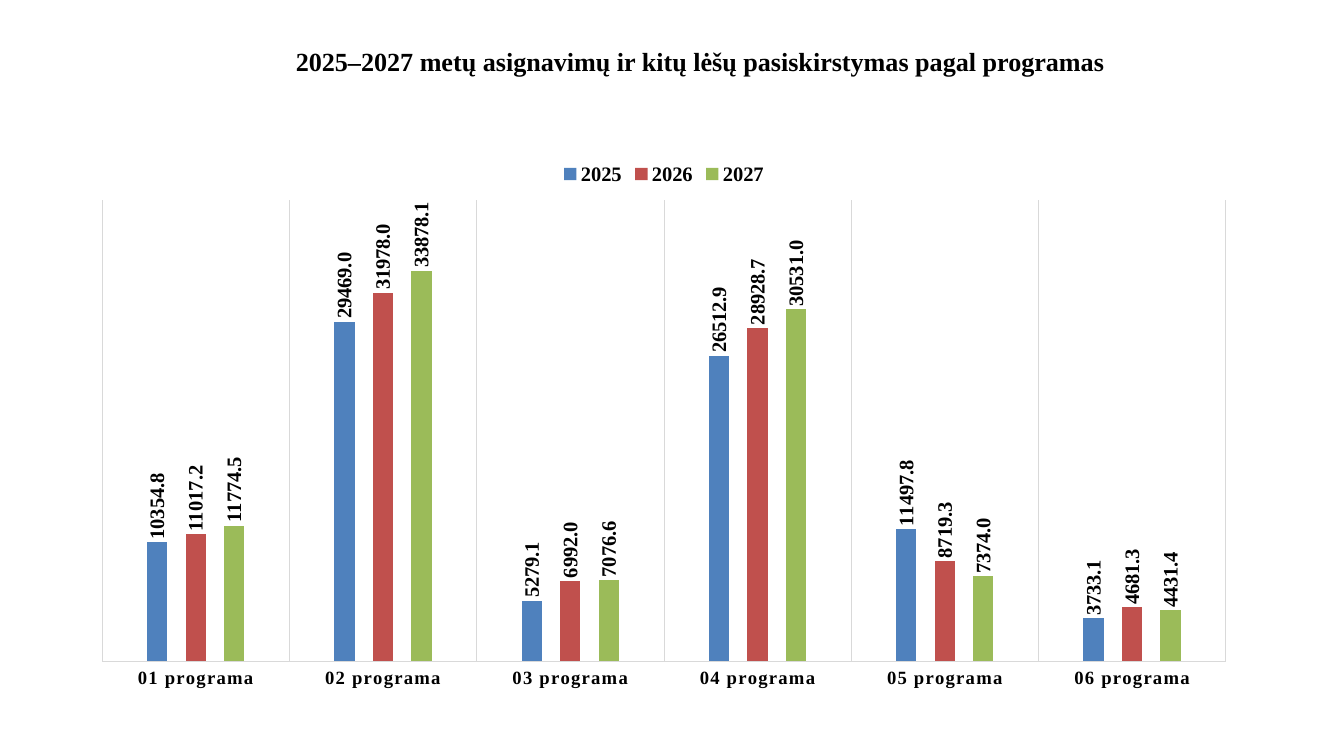
from lxml import etree
from pptx import Presentation
from pptx.chart.data import CategoryChartData
from pptx.dml.color import RGBColor
from pptx.enum.chart import XL_CHART_TYPE as ChartType
from pptx.enum.chart import XL_LABEL_POSITION as LabelPosition
from pptx.enum.chart import XL_LEGEND_POSITION as LegendPosition
from pptx.enum.chart import XL_TICK_LABEL_POSITION as TickLabelPosition
from pptx.enum.chart import XL_TICK_MARK as TickMark
from pptx.enum.text import MSO_AUTO_SIZE as AutoSize
from pptx.enum.text import PP_ALIGN as Align
from pptx.oxml import parse_xml
from pptx.oxml.ns import nsdecls, qn
from pptx.util import Pt

PX = 9144
FONT = "Times New Roman"
BLACK = "000000"
GREY = "D9D9D9"
PROGRAMS = [f"{number:02d} programa" for number in range(1, 7)]
YEARS = [
    ("2025", "4F81BD", [10354.8, 29469, 5279.1, 26512.9, 11497.8, 3733.1]),
    ("2026", "C0504D", [11017.2, 31978, 6992, 28928.7, 8719.3, 4681.3]),
    ("2027", "9BBB59", [11774.5, 33878.1, 7076.6, 30531, 7374, 4431.4]),
]


def color(hex_string):
    return RGBColor.from_string(hex_string)


def style_font(font, size):
    font.name = FONT
    font.size = Pt(size)
    font.bold = True
    font.color.rgb = color(BLACK)


presentation = Presentation()
presentation.slide_width = 2000 * PX
presentation.slide_height = 1125 * PX
slide = presentation.slides.add_slide(presentation.slide_layouts[6])

chart_data = CategoryChartData(number_format="0.0")
chart_data.categories = PROGRAMS
for year, _, amounts in YEARS:
    chart_data.add_series(year, amounts)
chart = slide.shapes.add_chart(
    ChartType.COLUMN_CLUSTERED, 117 * PX, 229 * PX, 1742 * PX, 808 * PX, chart_data
).chart
chart.has_title = False
chart.font.name = "Calibri"
chart.font.size = Pt(10)
chart.font.color.rgb = color(BLACK)

chart.has_legend = True
chart.legend.position = LegendPosition.TOP
chart.legend.include_in_layout = False
style_font(chart.legend.font, 22)

category_axis = chart.category_axis
category_axis.major_tick_mark = TickMark.NONE
category_axis.minor_tick_mark = TickMark.NONE
category_axis.tick_label_position = TickLabelPosition.LOW
category_axis.has_major_gridlines = True
for line in (category_axis.format.line, category_axis.major_gridlines.format.line):
    line.color.rgb = color(GREY)
    line.width = Pt(0.75)
style_font(category_axis.tick_labels.font, 20)
category_axis._element.find(".//" + qn("a:defRPr")).set("spc", "120")

value_axis = chart.value_axis
value_axis.visible = False
value_axis.has_major_gridlines = False
value_axis.minimum_scale = 0
value_axis.maximum_scale = 40000

plot = chart.plots[0]
plot.gap_width = 444
plot.overlap = -90
plot.vary_by_categories = False
for series, (_, fill_color, _) in zip(plot.series, YEARS):
    series.format.fill.solid()
    series.format.fill.fore_color.rgb = color(fill_color)
    labels = series.data_labels
    labels.show_value = True
    labels.position = LabelPosition.OUTSIDE_END
    labels.number_format = "0.0"
    labels.number_format_is_linked = False
    style_font(labels.font, 22)
    body = labels._element.find(".//" + qn("a:bodyPr"))
    body.set("rot", "-5400000")
    body.set("vert", "horz")

plot_area = chart._chartSpace.find(".//" + qn("c:plotArea"))
for old_layout in plot_area.findall(qn("c:layout")):
    plot_area.remove(old_layout)
layout = parse_xml(f"<c:layout {nsdecls('c')}><c:manualLayout/></c:layout>")
for tag, value in [
    ("layoutTarget", "inner"), ("xMode", "edge"), ("yMode", "edge"),
    ("x", "0.02"), ("y", "0.085"), ("w", "0.96"), ("h", "0.85"),
]:
    etree.SubElement(layout[0], qn(f"c:{tag}")).set("val", value)
plot_area.insert(0, layout)

title = slide.shapes.add_textbox(400 * PX, 62 * PX, 1283 * PX, 57 * PX)
text_frame = title.text_frame
text_frame.word_wrap = True
text_frame.auto_size = AutoSize.SHAPE_TO_FIT_TEXT
text_frame.text = "2025–2027 metų asignavimų ir kitų lėšų pasiskirstymas pagal programas"
paragraph = text_frame.paragraphs[0]
paragraph.alignment = Align.CENTER
style_font(paragraph.runs[0].font, 28)

presentation.save("out.pptx")
